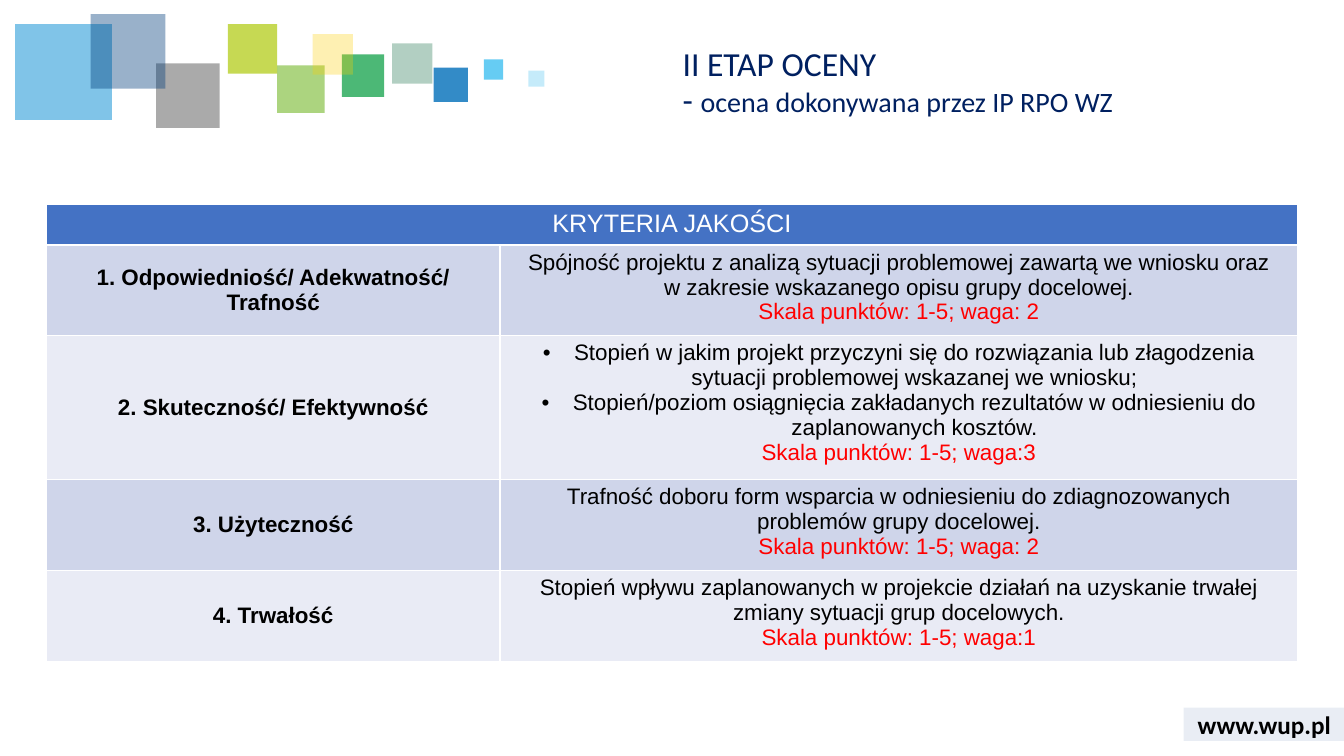
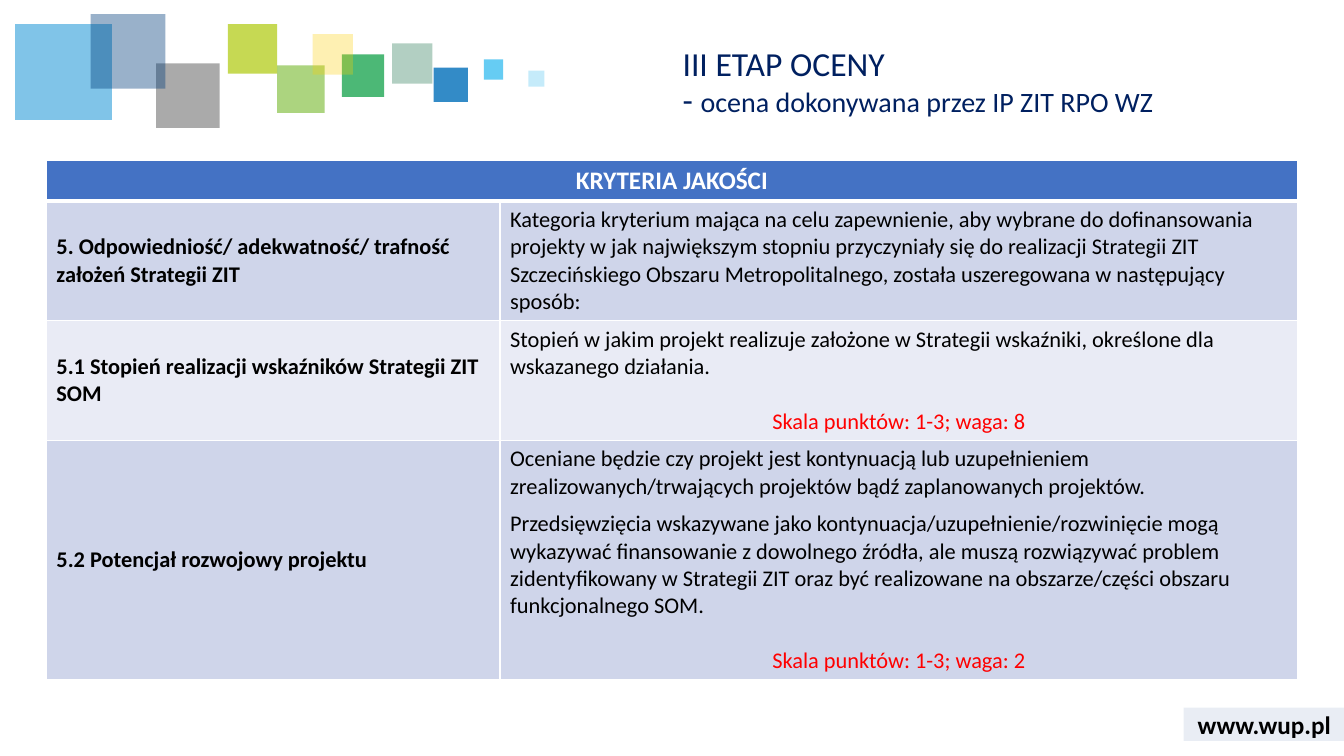
from collections import namedtuple

from lxml.etree import SubElement
from pptx import Presentation
from pptx.dml.color import RGBColor
from pptx.enum.shapes import MSO_SHAPE
from pptx.enum.text import MSO_ANCHOR, MSO_AUTO_SIZE, PP_ALIGN
from pptx.oxml.ns import qn
from pptx.util import Inches, Pt

# Shared colours and sizes
NAVY, BLACK, WHITE, RED = "002060", "000000", "FFFFFF", "FF0000"
HEAD, BANDS = "4472C4", ("CFD5EA", "E9EBF5")
WIDTHS = (4.5, 7.91)
LEFT = 0.46

# Left, top, width, height, colour, opacity in percent
SQUARES = (
    (3.89, 0.43, 0.4, 0.4, "006138", 30),
    (4.3, 0.67, 0.34, 0.34, "006EB9", 80),
    (3.39, 0.54, 0.42, 0.42, "009A3C", 70),
    (0.15, 0.24, 0.96, 0.95, "028BD3", 50),
    (2.75, 0.65, 0.47, 0.47, "75B82A", 60),
    (1.55, 0.63, 0.63, 0.64, "575757", 50),
    (0.9, 0.14, 0.74, 0.74, "003D7C", 40),
    (4.8, 0.59, 0.19, 0.2, "40C0F1", 80),
    (2.26, 0.24, 0.49, 0.49, "AFCA0B", 70),
    (3.1, 0.34, 0.4, 0.4, "FED000", 30),
    (5.24, 0.7, 0.16, 0.16, "40C0F1", 30),
)
BAND = (11.74, 7.02, 1.6, 0.33, "2F5597", 10)

# Table content: gap is the space before, in points
Para = namedtuple("Para", "text gap bullet red", defaults=(0, False, False))
Row = namedtuple("Row", "height label paras")


def score(text, gap=0):
    return Para(text, gap, red=True)


QUALITY = (
    Row(0.9, "1. Odpowiedniość/ Adekwatność/ Trafność", (
        Para("Spójność projektu z analizą sytuacji problemowej zawartą we wniosku oraz\n"
             "w zakresie wskazanego opisu grupy docelowej."),
        score("Skala punktów: 1-5; waga: 2"))),
    Row(1.43, "2. Skuteczność/ Efektywność", (
        Para("Stopień w jakim projekt przyczyni się do rozwiązania lub złagodzenia "
             "sytuacji problemowej wskazanej we wniosku;", bullet=True),
        Para("Stopień/poziom osiągnięcia zakładanych rezultatów w odniesieniu do "
             "zaplanowanych kosztów.", bullet=True),
        score("Skala punktów: 1-5; waga:3"))),
    Row(0.9, "3. Użyteczność", (
        Para("Trafność doboru form wsparcia w odniesieniu do zdiagnozowanych "
             "problemów grupy docelowej."),
        score("Skala punktów: 1-5; waga: 2"))),
    Row(0.9, "4. Trwałość", (
        Para("Stopień wpływu zaplanowanych w projekcie działań na uzyskanie trwałej "
             "zmiany sytuacji grup docelowych."),
        score("Skala punktów: 1-5; waga:1"))),
)
STRATEGY = (
    Row(1.18, "5. Odpowiedniość/ adekwatność/ trafność założeń Strategii ZIT", (
        Para("Kategoria kryterium mająca na celu zapewnienie, aby wybrane do "
             "dofinansowania projekty w jak największym stopniu przyczyniały się do "
             "realizacji Strategii ZIT Szczecińskiego Obszaru Metropolitalnego, "
             "została uszeregowana w następujący sposób:"),)),
    Row(1.18, "5.1 Stopień realizacji wskaźników Strategii ZIT SOM", (
        Para("Stopień w jakim projekt realizuje założone w Strategii wskaźniki, "
             "określone dla wskazanego działania."),
        score("Skala punktów: 1-3; waga: 8", 19.5))),
    Row(2.37, "5.2 Potencjał rozwojowy projektu", (
        Para("Oceniane będzie czy projekt jest kontynuacją lub uzupełnieniem "
             "zrealizowanych/trwających projektów bądź zaplanowanych projektów."),
        Para("Przedsięwzięcia wskazywane jako kontynuacja/uzupełnienie/rozwinięcie "
             "mogą wykazywać finansowanie z dowolnego źródła, ale muszą rozwiązywać "
             "problem zidentyfikowany w Strategii ZIT oraz być realizowane na "
             "obszarze/części obszaru funkcjonalnego SOM.", 7.3),
        score("Skala punktów: 1-3; waga: 2", 19.5))),
)


def paint(fill, color):
    fill.solid()
    fill.fore_color.rgb = RGBColor.from_string(color)


def write(para, text, font, size, color, bold=False):
    """Add runs to a paragraph, with a line break at each newline."""
    for i, line in enumerate(text.split("\n")):
        if i:
            para.add_line_break()
        run = para.add_run()
        run.text = line
        run.font.name, run.font.size, run.font.bold = font, Pt(size), bold
        paint(run.font.fill, color)


def block(slide, left, top, width, height, color, alpha):
    """Add a see-through rectangle."""
    shape = slide.shapes.add_shape(
        MSO_SHAPE.RECTANGLE, *map(Inches, (left, top, width, height)))
    shape.shadow.inherit = False
    paint(shape.fill, color)
    tint = shape.element.spPr.find(".//" + qn("a:srgbClr"))
    SubElement(tint, qn("a:alpha"), val=str(alpha * 1000))
    shape.line.fill.background()
    return shape


def frame(slide):
    """Draw the squares and the footer band."""
    for square in SQUARES:
        block(slide, *square)
    text = block(slide, *BAND).text_frame
    text.margin_left = text.margin_right = text.margin_top = text.margin_bottom = 0
    text.vertical_anchor = MSO_ANCHOR.MIDDLE
    para = text.paragraphs[0]
    para.alignment = PP_ALIGN.CENTER
    write(para, "www.wup.pl", "Calibri", 18, BLACK, True)


def head(slide, stage, detail):
    """Place and fill the title."""
    title = slide.shapes.title
    title.left, title.top = Inches(6.67), Inches(0.42)
    title.width, title.height = Inches(6.36), Inches(0.85)
    text = title.text_frame
    text.auto_size = MSO_AUTO_SIZE.NONE
    text.vertical_anchor = MSO_ANCHOR.TOP
    para = text.paragraphs[0]
    para.alignment, para.line_spacing = PP_ALIGN.LEFT, 0.9
    write(para, stage + "\n- ", "Calibri", 24, NAVY)
    write(para, detail, "Calibri", 20, NAVY)


def style(cell, color, top=1, base=1):
    """Give a cell white borders, in points, and a fill."""
    props = cell._tc.get_or_add_tcPr()
    for side, width in (("L", 1), ("R", 1), ("T", top), ("B", base)):
        line = SubElement(props, qn("a:ln" + side), w=str(Pt(width)))
        SubElement(SubElement(line, qn("a:solidFill")), qn("a:srgbClr"), val=WHITE)
    paint(cell.fill, color)


def dot(para):
    """Put a bullet with a hanging indent on a paragraph."""
    props = para._p.get_or_add_pPr()
    props.set("marL", str(Inches(0.31)))
    props.set("indent", str(-Inches(0.31)))
    SubElement(props, qn("a:buFont"), typeface="Arial")
    SubElement(props, qn("a:buChar"), char="•")


def fill_cell(cell, paras, font, align):
    text = cell.text_frame
    for i, item in enumerate(paras):
        para = text.add_paragraph() if i else text.paragraphs[0]
        if item.bullet:
            dot(para)
        para.alignment = PP_ALIGN.CENTER if item.red else align
        if item.gap:
            para.space_before = Pt(item.gap)
        write(para, item.text, font, 16, RED if item.red else BLACK)


def grid(slide, top, rows, font, align, bold, rule):
    """Add the table of criteria; rule is the line under its header."""
    heights = [0.4] + [row.height for row in rows]
    table = slide.shapes.add_table(
        len(heights), len(WIDTHS), Inches(LEFT), Inches(top),
        Inches(sum(WIDTHS)), Inches(sum(heights))).table
    for col, width in zip(table.columns, WIDTHS):
        col.width = Inches(width)
    for line, height in zip(table.rows, heights):
        line.height = Inches(height)

    # Header across both columns
    first = table.cell(0, 0)
    first.merge(table.cell(0, 1))
    for col in range(2):
        style(table.cell(0, col), HEAD, base=rule)
    para = first.text_frame.paragraphs[0]
    para.alignment = PP_ALIGN.CENTER
    write(para, "KRYTERIA JAKOŚCI", font, 18, WHITE, bold)

    # Criteria
    for i, row in enumerate(rows, 1):
        label, body = table.cell(i, 0), table.cell(i, 1)
        for cell in (label, body):
            style(cell, BANDS[(i - 1) % 2], top=rule if i == 1 else 1)
        label.vertical_anchor = MSO_ANCHOR.MIDDLE
        para = label.text_frame.paragraphs[0]
        para.alignment = align
        write(para, row.label, font, 16, BLACK, True)
        fill_cell(body, row.paras, font, align)


def main():
    deck = Presentation()
    deck.slide_width, deck.slide_height = Inches(13.33), Inches(7.5)
    pages = (
        ("II ETAP OCENY", "ocena dokonywana przez IP RPO WZ",
         (2.03, QUALITY, "Arial", PP_ALIGN.CENTER, False, 1)),
        ("III ETAP OCENY", "ocena dokonywana przez IP ZIT RPO WZ",
         (1.59, STRATEGY, "Calibri", PP_ALIGN.LEFT, True, 3)),
    )
    for stage, detail, table in pages:
        slide = deck.slides.add_slide(deck.slide_layouts[5])
        frame(slide)
        grid(slide, *table)
        head(slide, stage, detail)
    deck.save("out.pptx")


if __name__ == "__main__":
    main()
